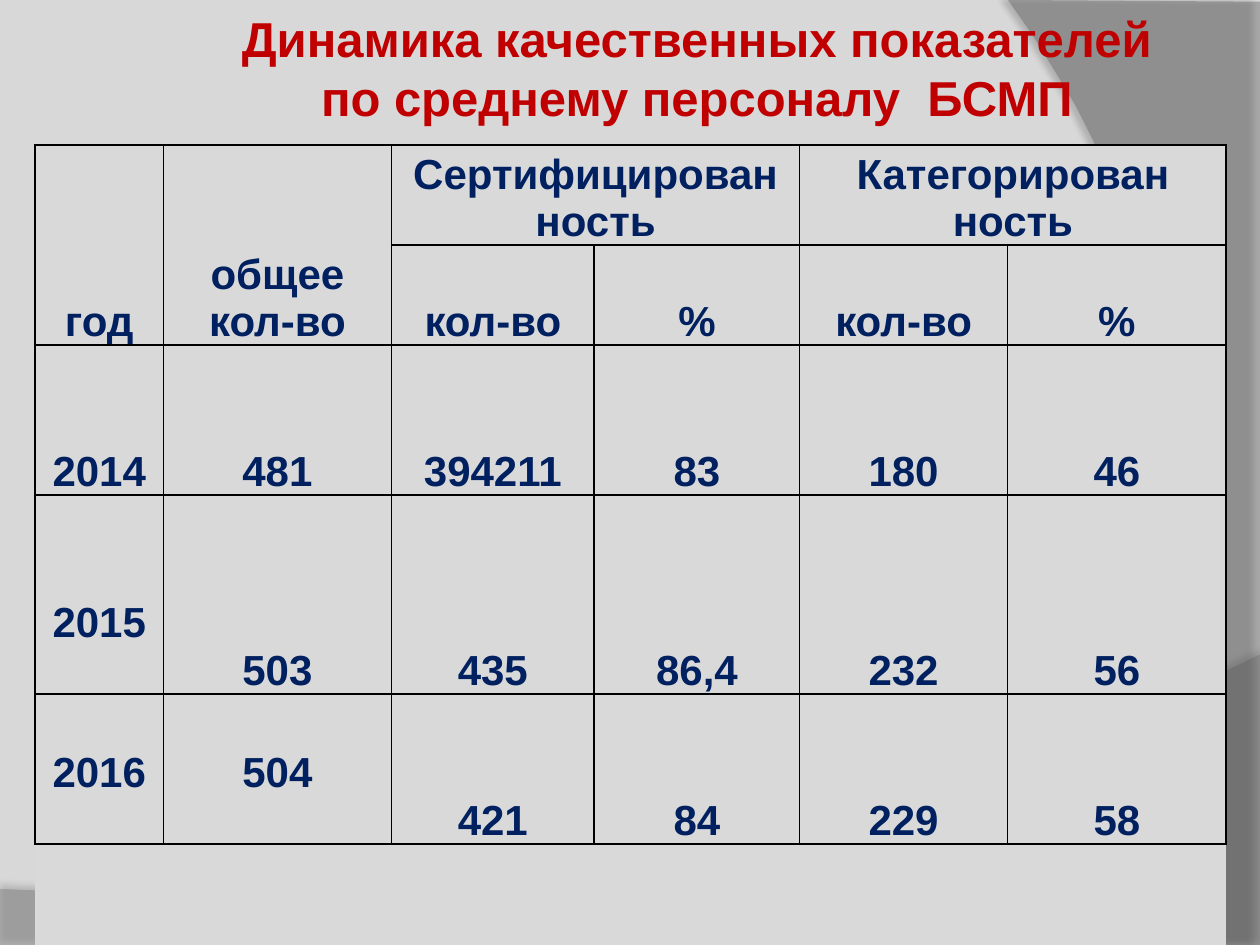
import pptx
import pptx.util
import pptx.dml.color
import pptx.enum.text
import pptx.oxml
import pptx.oxml.ns
from dataclasses import dataclass

Pt = pptx.util.Pt
RGB = pptx.dml.color.RGBColor.from_string
qn = pptx.oxml.ns.qn
NS = pptx.oxml.ns.nsdecls("a")
CENTER = pptx.enum.text.PP_ALIGN.CENTER
ANCHOR = pptx.enum.text.MSO_ANCHOR


@dataclass(frozen=True)
class Theme:
    font: str = "Arial"
    background: str = "D8D8D8"
    cell: str = "D9D9D9"
    border: str = "000000"
    title: str = "C00000"
    text: str = "002060"
    wave: str = "7F7F7F"
    side: str = "5E5E5E"
    title_size: int = 28
    text_size: int = 24


THEME = Theme()
COLS = [73.4, 50.4, 79.9, 48.2, 67.7, 49, 68.4, 49, 69.8, 49, 76]
ROWS = [57.2, 57.2, 85.7, 113.7, 85.7, 57.6]
LINE = 27
SUBHEADS = ["кол-во", "%", "кол-во", "%"]
DATA = [
    ["2014", "481", "394211", "83", "180", "46"],
    ["2015", "503", "435", "86,4", "232", "56"],
    ["2016", "504", "421", "84", "229", "58"],
]
RAISED = {"2015", "2016", "504"}


def style_text(tf, size, color):
    for p in tf.paragraphs:
        p.alignment = CENTER
        for r in p.runs:
            r.font.name = THEME.font
            r.font.size = Pt(size)
            r.font.bold = True
            r.font.color.rgb = RGB(color)


def bezier(p0, p1, p2, p3, steps=32):
    points = []
    for i in range(1, steps + 1):
        t = i / steps
        u = 1 - t
        points.append(tuple(
            u**3 * a + 3 * u * u * t * b + 3 * u * t * t * c + t**3 * d
            for a, b, c, d in zip(p0, p1, p2, p3)))
    return points


def add_backdrop(s, points, color, alpha, shadow):
    fb = s.shapes.build_freeform(*points[0], scale=Pt(1))
    fb.add_line_segments(points[1:], close=True)
    sp = fb.convert_to_shape()
    sp.fill.solid()
    sp.fill.fore_color.rgb = RGB(color)
    sp.line.fill.background()
    sp.shadow.inherit = False
    spPr = sp._element.spPr
    spPr.find(".//" + qn("a:srgbClr")).append(
        pptx.oxml.parse_xml(f'<a:alpha {NS} val="{alpha * 1000}"/>'))
    opacity, blur, dist, angle = shadow
    spPr.find(qn("a:effectLst")).append(pptx.oxml.parse_xml(
        f'<a:outerShdw {NS} blurRad="{Pt(blur)}" dist="{Pt(dist)}" '
        f'dir="{angle * 60000}" algn="ctr" rotWithShape="0">'
        f'<a:srgbClr val="000000"><a:alpha val="{opacity * 1000}"/>'
        '</a:srgbClr></a:outerShdw>'))


def add_title(s, text):
    sp = s.shapes.title
    sp.left, sp.top, sp.width, sp.height = Pt(22.3), Pt(0), Pt(697.7), Pt(77)
    tf = sp.text_frame
    tf.text = text
    tf.word_wrap = True
    tf.auto_size = pptx.enum.text.MSO_AUTO_SIZE.NONE
    tf.vertical_anchor = ANCHOR.MIDDLE
    tf.margin_left = Pt(57.6)
    tf.margin_right = tf.margin_top = tf.margin_bottom = Pt(3.6)
    style_text(tf, THEME.title_size, THEME.title)
    s.shapes._spTree.append(sp._element)


def set_borders(cell, sides):
    tcPr = cell._tc.get_or_add_tcPr()
    for i, side in enumerate("LRTB"):
        fill = (f'<a:solidFill><a:srgbClr val="{THEME.border}"/></a:solidFill>'
                if side in sides else "<a:noFill/>")
        tcPr.insert(i, pptx.oxml.parse_xml(
            f'<a:ln{side} {NS} w="{Pt(1)}">{fill}</a:ln{side}>'))


def fill_cell(table, row, col, text, rows=1, cols=1):
    cell = table.cell(row, col)
    if rows * cols > 1:
        cell.merge(table.cell(row + rows - 1, col + cols - 1))
    cell.text_frame.text = text
    cell.vertical_anchor = ANCHOR.BOTTOM
    cell.margin_left = cell.margin_right = cell.margin_top = Pt(0.7)
    cell.margin_bottom = Pt(LINE if text in RAISED else 0)
    style_text(cell.text_frame, THEME.text_size, THEME.text)


def add_staff_table(s):
    table = s.shapes.add_table(len(ROWS), len(COLS), Pt(20), Pt(82.8),
                               Pt(sum(COLS)), Pt(sum(ROWS))).table
    table.first_row = table.horz_banding = False
    for column, width in zip(table.columns, COLS):
        column.width = Pt(width)
    for row, height in zip(table.rows, ROWS):
        row.height = Pt(height)
    last = len(ROWS) - 1
    for i, row in enumerate(table.rows):
        for cell in row.cells:
            cell.fill.solid()
            cell.fill.fore_color.rgb = RGB(THEME.cell)
            set_borders(cell, "T" if i == last else "LRTB")

    fill_cell(table, 0, 0, "год", rows=2)
    fill_cell(table, 0, 1, "общее кол-во", rows=2, cols=2)
    fill_cell(table, 0, 3, "Сертифицирован\nность", cols=4)
    fill_cell(table, 0, 7, "Категорирован\nность", cols=4)
    for i, text in enumerate(SUBHEADS):
        fill_cell(table, 1, 3 + 2 * i, text, cols=2)
    for row, (year, *values) in enumerate(DATA, start=2):
        fill_cell(table, row, 0, year)
        for i, text in enumerate(values):
            fill_cell(table, row, 1 + 2 * i, text, cols=2)


def main():
    prs = pptx.Presentation()
    prs.slide_width, prs.slide_height = Pt(720), Pt(540)
    s = prs.slides.add_slide(prs.slide_layouts[5])
    s.background.fill.solid()
    s.background.fill.fore_color.rgb = RGB(THEME.background)

    wave = [(0, 507.6), (0, 540.7), (720, 540.7), (720, 374.4)]
    wave += bezier(wave[-1], (402.5, 524.9), (281.5, 517.7), wave[0])
    side = [(720, 1.4), (720, 540), (591.1, 540)]
    side += bezier(side[-1], (673.2, 445.7), (733, 216), (576, 0))
    add_backdrop(s, wave, THEME.wave, 45, (35, 4, 3.5, 270))
    add_backdrop(s, side, THEME.side, 40, (45, 4, 4, 180))
    add_staff_table(s)
    add_title(s, "Динамика качественных показателей\vпо среднему персоналу  БСМП")
    prs.save("out.pptx")


if __name__ == "__main__":
    main()
